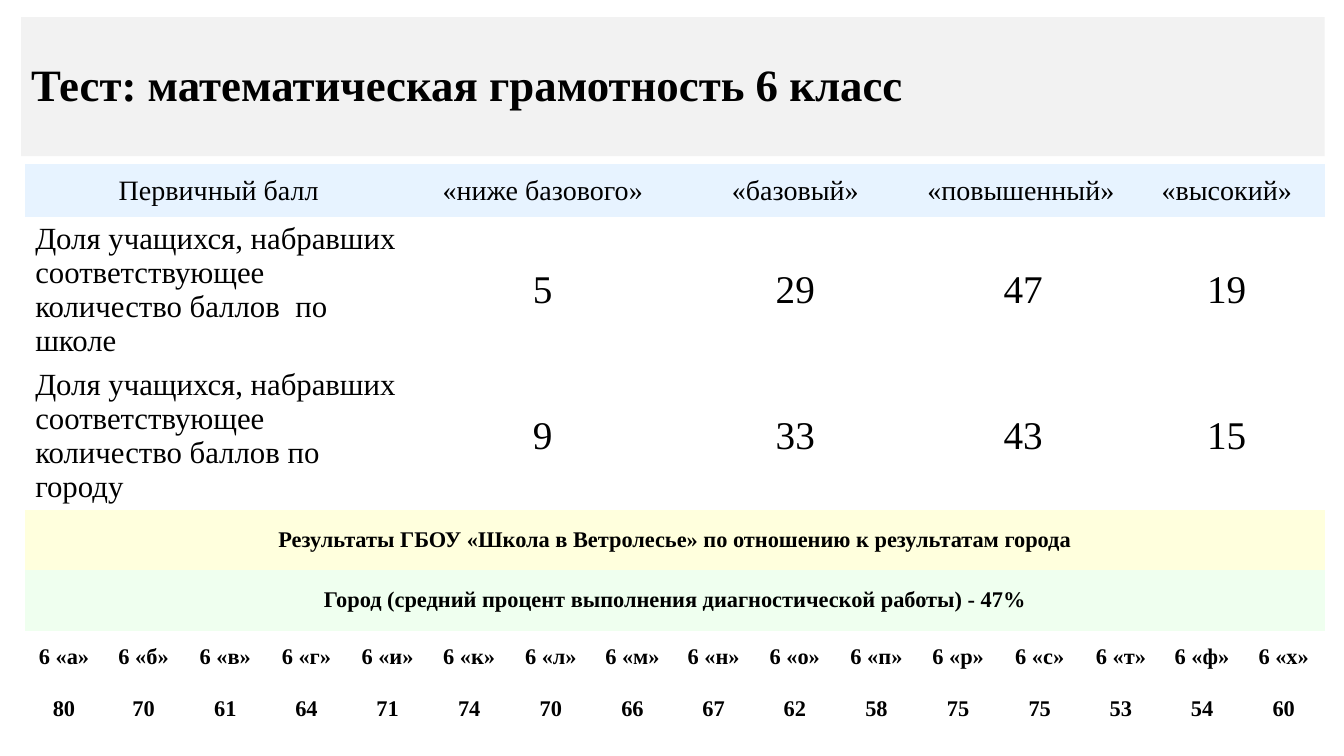
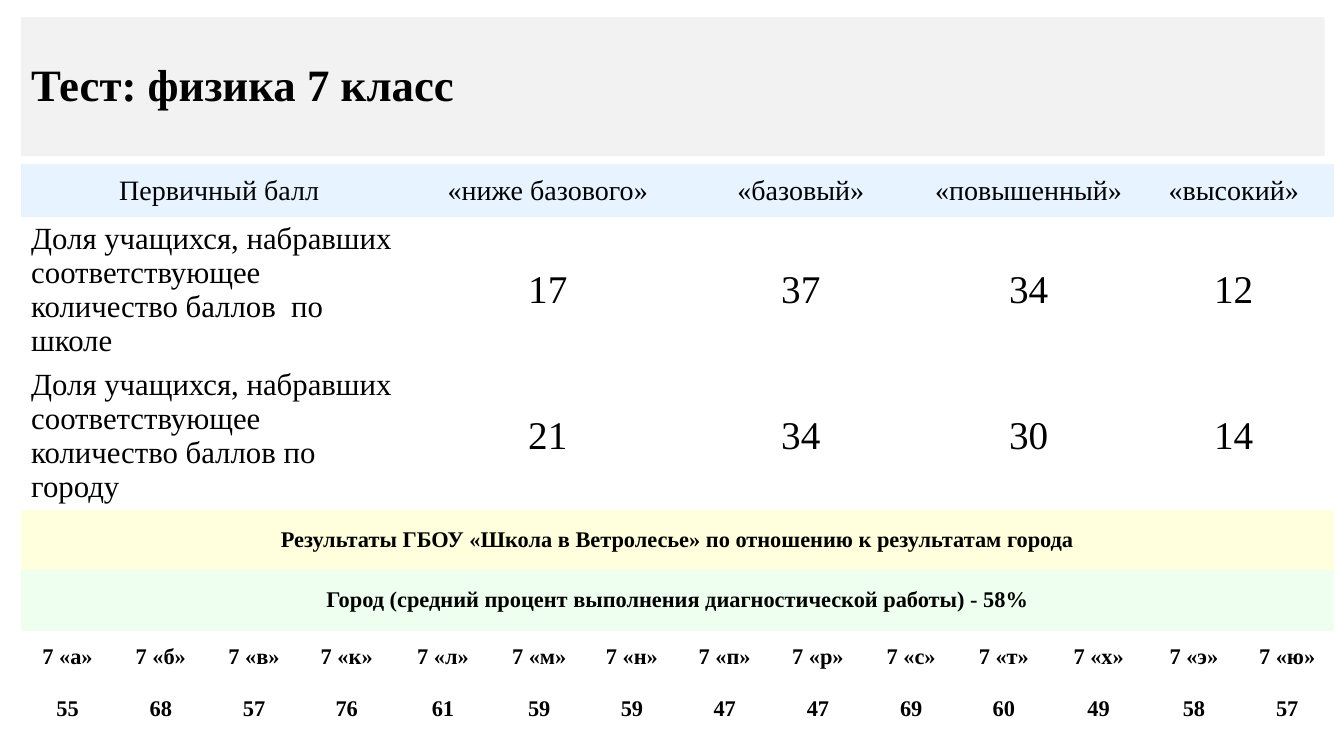
import pptx
import pptx.util
import pptx.dml.color
import pptx.enum.shapes
import pptx.enum.text
import pptx.oxml.ns

Inches = pptx.util.Inches
RGB = pptx.dml.color.RGBColor
ALIGN = pptx.enum.text.PP_ALIGN
MIDDLE = pptx.enum.text.MSO_ANCHOR.MIDDLE

BLACK = RGB(0x00, 0x00, 0x00)
WHITE = RGB(0xFF, 0xFF, 0xFF)
GREY = RGB(0xF2, 0xF2, 0xF2)
BLUE = RGB(0xE7, 0xF3, 0xFF)
CREAM = RGB(0xFF, 0xFF, 0xDD)
MINT = RGB(0xEF, 0xFF, 0xEF)

FONT = "Times New Roman"
PLAIN = "{2D5ABB26-0587-4C30-8999-92F81FD0307C}"  # table style without lines
TITLE = {"size": 32, "bold": True}
HEAD = {"size": 20}
LABEL = {"size": 22}
SCORE = {"size": 28}
NOTE = {"size": 16, "bold": True}

TOP = 1.63
ROWS = [0.52, 1.43, 1.43, 0.6, 0.6, 0.52, 0.52]
LEVELS = ["Первичный балл", "«ниже базового»", "«базовый»", "«повышенный»", "«высокий»"]
SCHOOL = "Доля учащихся, набравших соответствующее количество баллов  по школе"
CITY = "Доля учащихся, набравших соответствующее количество баллов по городу"
RESULT = "Результаты ГБОУ «Школа в Ветролесье» по отношению к результатам города"
MEAN = "Город (средний процент выполнения диагностической работы) - {}%"

# odd: the one class column of another width, as (index, width)
# stops: right edge of each level, as (whole classes, inches more)
SLIDES = [
    {
        "title": "Тест: математическая грамотность 6 класс",
        "left": 0.25, "width": 12.89, "odd": (0, 0.77),
        "stops": [(4, 0.65), (8, 0), (11, 0), (13, 0.48), (16, 0)],
        "flush": ["«повышенный»"],
        "school": [5, 29, 47, 19], "city": [9, 33, 43, 15], "mean": 47,
        "grade": 6, "classes": "абвгиклмнопрстфх",
        "marks": [80, 70, 61, 64, 71, 74, 70, 66, 67, 62, 58, 75, 75, 53, 54, 60],
    },
    {
        "title": "Тест: физика 7 класс",
        "left": 0.21, "width": 12.96, "odd": (11, 0.96),
        "stops": [(4, 0.18), (7, 0), (9, 0.58), (11, 0.83), (14, 0)],
        "flush": [],
        "school": [17, 37, 34, 12], "city": [21, 34, 30, 14], "mean": 58,
        "grade": 7, "classes": "абвклмнпрстхэю",
        "marks": [55, 68, 57, 76, 61, 59, 59, 47, 47, 69, 60, 49, 58, 57],
    },
]


def write(frame, text, look, align):
    para = frame.paragraphs[0]
    para.alignment = align
    run = para.add_run()
    run.text = text
    run.font.name = FONT
    run.font.color.rgb = BLACK
    for name, value in look.items():
        setattr(run.font, name, pptx.util.Pt(value) if name == "size" else value)
    return para


def add_title(slide, text):
    box = slide.shapes.add_shape(
        pptx.enum.shapes.MSO_SHAPE.RECTANGLE,
        Inches(0.21), Inches(0.17), Inches(12.93), Inches(1.38))
    box.shadow.inherit = False
    box.fill.solid()
    box.fill.fore_color.rgb = GREY
    box.line.fill.background()
    box.text_frame.word_wrap = True
    box.text_frame.vertical_anchor = MIDDLE
    write(box.text_frame, text, TITLE, ALIGN.LEFT).line_spacing = 0.9


def class_edges(data):
    count = len(data["classes"])
    odd, wide = data["odd"]
    pitch = (data["width"] - wide) / (count - 1)
    widths = [wide if i == odd else pitch for i in range(count)]
    return [round(sum(widths[:i]), 2) for i in range(count + 1)]


def add_results(slide, data):
    """Draw the table; its columns are cut at every class and level edge."""
    classes = class_edges(data)
    levels = [0] + [round(classes[i] + more, 2) for i, more in data["stops"]]
    whole = [0, classes[-1]]
    cuts = sorted(set(classes + levels))
    names = [f"{data['grade']} «{letter}»" for letter in data["classes"]]
    rows = [
        (levels, LEVELS, HEAD, BLUE),
        (levels, [SCHOOL] + data["school"], SCORE, WHITE),
        (levels, [CITY] + data["city"], SCORE, WHITE),
        (whole, [RESULT], NOTE, CREAM),
        (whole, [MEAN.format(data["mean"])], NOTE, MINT),
        (classes, names, NOTE, WHITE),
        (classes, data["marks"], NOTE, WHITE),
    ]
    table = slide.shapes.add_table(
        len(rows), len(cuts) - 1, Inches(data["left"]), Inches(TOP),
        Inches(data["width"]), Inches(sum(ROWS))).table
    table.first_row = table.horz_banding = False
    table._tbl.tblPr.find(pptx.oxml.ns.qn("a:tableStyleId")).text = PLAIN
    for column, start, end in zip(table.columns, cuts, cuts[1:]):
        column.width = Inches(end - start)
    for row, height in zip(table.rows, ROWS):
        row.height = Inches(height)

    for r, (edges, texts, look, fill) in enumerate(rows):
        for text, start, end in zip(texts, edges, edges[1:]):
            first, last = cuts.index(start), cuts.index(end) - 1
            cell = table.cell(r, first)
            if last > first:
                cell.merge(table.cell(r, last))
            cell.fill.solid()
            cell.fill.fore_color.rgb = fill
            cell.vertical_anchor = MIDDLE
            label = text in (SCHOOL, CITY)
            flush = label or text in data["flush"]
            write(cell.text_frame, str(text), LABEL if label else look,
                  ALIGN.LEFT if flush else ALIGN.CENTER)


def main():
    deck = pptx.Presentation()
    deck.slide_width, deck.slide_height = Inches(13.33), Inches(7.5)
    for data in SLIDES:
        slide = deck.slides.add_slide(deck.slide_layouts[6])
        add_title(slide, data["title"])
        add_results(slide, data)
    deck.save("out.pptx")


if __name__ == "__main__":
    main()
